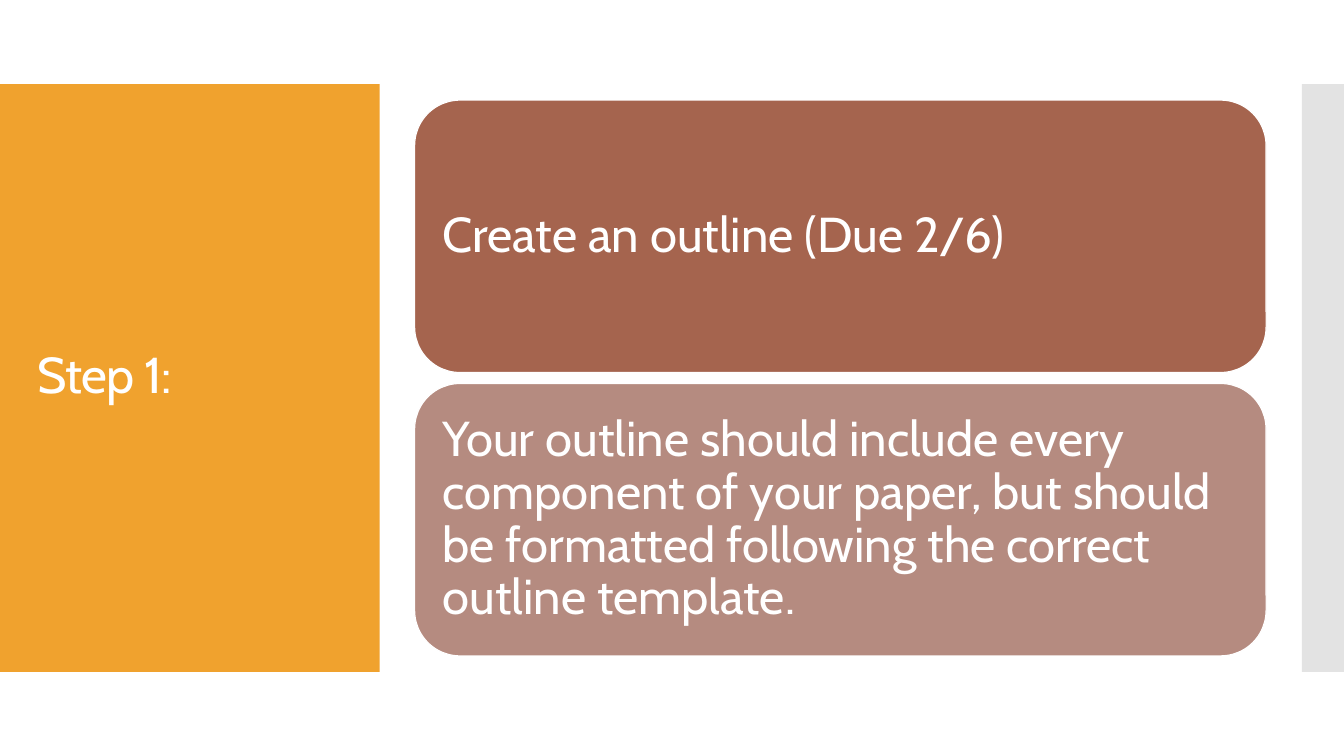
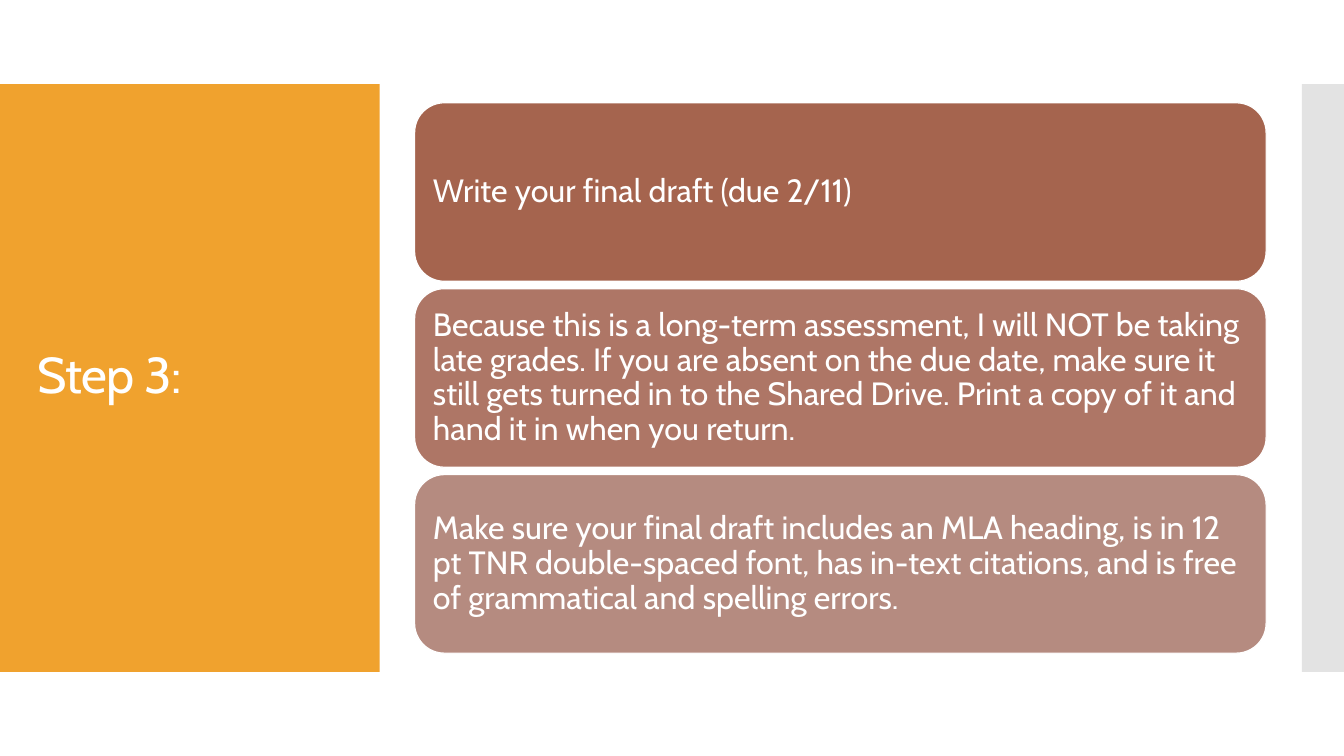
import pptx
import pptx.util
import pptx.dml.color
import pptx.enum.shapes
import pptx.enum.text
import pptx.oxml

Pt = pptx.util.Pt
SHAPES = pptx.enum.shapes.MSO_SHAPE

# Content
STEPS = [
    {"title": "Step 1:", "size": 35, "height": 194.6, "gap": 7.8, "cards": [
        ("Create an outline (Due 2/6)", "rust"),
        ("Your outline should include every component of your paper, but should "
         "be formatted following the correct outline template.", "blush"),
    ]},
    {"title": "Step 3:", "size": 23, "height": 127.5, "gap": 5.3, "cards": [
        ("Write your final draft (due 2/11)", "rust"),
        ("Because this is a long-term assessment, I will NOT be taking late grades. "
         "If you are absent on the due date, make sure it still gets turned in to the "
         "Shared Drive. Print a copy of it and hand it in when you return.", "clay"),
        ("Make sure your final draft includes an MLA heading, is in 12 pt TNR "
         "double-spaced font, has in-text citations, and is free of grammatical "
         "and spelling errors.", "blush"),
    ]},
]

# Shared style, lengths in points
COLOURS = {"white": "FFFFFF", "amber": "F0A22E", "grey": "C8C8C8",
           "rust": "A5644E", "clay": "AE7666", "blush": "B58B80"}
FONT = "Cabin"
WIDTH, HEIGHT = 960, 540
BAND_TOP, BAND_HEIGHT = 60, 420
TITLE_BAND_WIDTH, SIDE_BAND_WIDTH = 271.2, 30
TITLE_BOX = (20, 88.5, 232, 362)
CARD_LEFT, CARD_WIDTH = 296.2, 608.2
CARD_INSET = 0.3  # share of the text size


def colour(name):
    return pptx.dml.color.RGBColor.from_string(COLOURS[name])


def write(shape, text, size, inset=7.2, tracking=None):
    frame = shape.text_frame
    frame.word_wrap = True
    frame.vertical_anchor = pptx.enum.text.MSO_ANCHOR.MIDDLE
    frame.margin_left = frame.margin_right = Pt(inset)
    frame.margin_top = frame.margin_bottom = Pt(inset)
    para = frame.paragraphs[0]
    para.alignment = pptx.enum.text.PP_ALIGN.LEFT
    para.line_spacing = 0.9
    span = para.add_run()
    span.text = text
    span.font.name = FONT
    span.font.size = Pt(size)
    span.font.color.rgb = colour("white")
    if tracking is not None:
        span.font._element.set("spc", str(round(tracking * 100)))


def add_block(page, kind, box, fill, outline=None, opacity=None):
    shape = page.shapes.add_shape(kind, *map(Pt, box))
    shape.shadow.inherit = False
    shape.fill.solid()
    shape.fill.fore_color.rgb = colour(fill)
    if outline:
        shape.line.color.rgb = colour("white")
        shape.line.width = Pt(outline)
    else:
        shape.line.fill.background()
    if opacity is not None:
        tint = shape.fill._xPr.find(".//" + pptx.oxml.ns.qn("a:srgbClr"))
        alpha = pptx.oxml.parse_xml(
            f'<a:alpha {pptx.oxml.ns.nsdecls("a")} val="{opacity * 1000}"/>')
        tint.append(alpha)
    return shape


def add_frame(page, title):
    """Side bands and slide title."""
    add_block(page, SHAPES.RECTANGLE,
              (0, BAND_TOP, TITLE_BAND_WIDTH, BAND_HEIGHT), "amber")
    add_block(page, SHAPES.RECTANGLE,
              (WIDTH - SIDE_BAND_WIDTH, BAND_TOP, SIDE_BAND_WIDTH, BAND_HEIGHT),
              "grey", opacity=50)
    write(page.shapes.add_textbox(*map(Pt, TITLE_BOX)), title, 36, tracking=-0.6)


def add_cards(page, step):
    """Stack of cards, centred on the slide height."""
    pitch = step["height"] + step["gap"]
    top = (HEIGHT - len(step["cards"]) * pitch + step["gap"]) / 2
    for row, (text, fill) in enumerate(step["cards"]):
        box = (CARD_LEFT, top + row * pitch, CARD_WIDTH, step["height"])
        card = add_block(page, SHAPES.ROUNDED_RECTANGLE, box, fill, outline=0.85)
        write(card, text, step["size"], inset=step["size"] * CARD_INSET)


def main():
    deck = pptx.Presentation()
    deck.slide_width, deck.slide_height = Pt(WIDTH), Pt(HEIGHT)
    for step in STEPS:
        page = deck.slides.add_slide(deck.slide_layouts[6])
        add_frame(page, step["title"])
        add_cards(page, step)
    deck.save("out.pptx")


if __name__ == "__main__":
    main()
